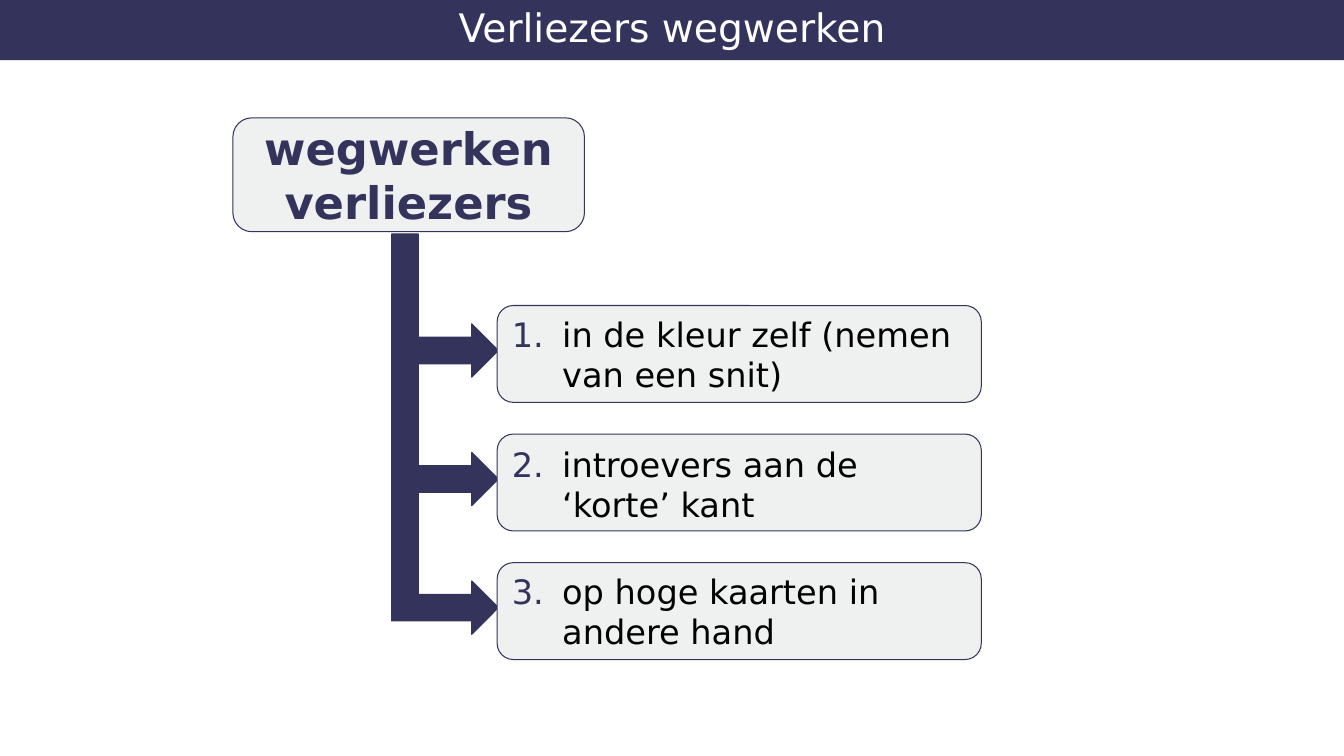
import pptx
import pptx.dml.color
import pptx.enum.shapes
import pptx.enum.text
import pptx.oxml.ns
import pptx.util
from lxml import etree

Cm, Pt = pptx.util.Cm, pptx.util.Pt
Kind = pptx.enum.shapes.MSO_SHAPE
Align = pptx.enum.text.PP_ALIGN
Anchor = pptx.enum.text.MSO_ANCHOR
qn = pptx.oxml.ns.qn


class Theme:
    navy, pale, white, black = "33335C", "EFF1F0", "FFFFFF", "000000"
    edge = Pt(0.75)
    face = "DejaVu Sans"
    title = {"size": Pt(28), "name": face, "color": white}
    head = {"size": Pt(32), "name": face, "color": navy, "bold": True}
    item = {"size": Pt(24), "name": face, "color": black}


def rgb(code):
    return pptx.dml.color.RGBColor.from_string(code)


def style(font, form):
    for key, value in form.items():
        if key == "color":
            font.color.rgb = rgb(value)
        else:
            setattr(font, key, value)


def block(slide, kind, box, fill, line=None):
    shape = slide.shapes.add_shape(kind, *map(Cm, box))
    shape.shadow.inherit = False
    shape.fill.solid()
    shape.fill.fore_color.rgb = rgb(fill)
    if line:
        shape.line.color.rgb = rgb(line)
        shape.line.width = Theme.edge
    else:
        shape.line.fill.background()
    return shape


def write(shape, lines, form, align, anchor=Anchor.MIDDLE):
    frame = shape.text_frame
    frame.word_wrap = True
    frame.auto_size = pptx.enum.text.MSO_AUTO_SIZE.NONE
    frame.vertical_anchor = anchor
    frame.text = "\n".join(lines)
    for para in frame.paragraphs:
        para.alignment = align
        style(para.runs[0].font, form)
    return frame


def number(para, start):
    """Give the paragraph a coloured automatic number and a hanging indent."""
    props = para._p.get_or_add_pPr()
    hang = Cm(1.27)
    props.set("marL", str(hang))
    props.set("indent", str(-hang))
    tint = etree.SubElement(props, qn("a:buClr"))
    etree.SubElement(tint, qn("a:srgbClr"), val=Theme.navy)
    etree.SubElement(props, qn("a:buAutoNum"), type="arabicPeriod",
                     startAt=str(start))


def banner(slide, box, text):
    x, y, w, h = box
    bar = block(slide, Kind.RECTANGLE, box, Theme.navy)
    title = slide.shapes.title
    bar.element.addnext(title.element)
    place = {"left": x, "top": y - 0.05, "width": w, "height": h + 0.05}
    for key, value in place.items():
        setattr(title, key, Cm(value))
    frame = write(title, [text], Theme.title, Align.CENTER)
    frame.paragraphs[0].line_spacing = 0.95


def header(slide, box, lines):
    card = block(slide, Kind.ROUNDED_RECTANGLE, box, Theme.pale, Theme.navy)
    write(card, lines, Theme.head, Align.CENTER)


def step(slide, box, index, text, anchor):
    """Draw a numbered card and the bent arrow that leads into its left side."""
    x, y, w, h = box
    long, wide = 3.61, 2.69
    mid = x - wide / 2 + 0.03
    arrow = block(slide, Kind.BENT_UP_ARROW,
                  (mid - long / 2, y - wide / 2, long, wide),
                  Theme.navy, Theme.navy)
    arrow.rotation = 90
    card = block(slide, Kind.ROUNDED_RECTANGLE, box, Theme.pale, Theme.navy)
    frame = write(card, [text], Theme.item, Align.LEFT, anchor)
    number(frame.paragraphs[0], index)


def steps(slide, box, items):
    x, y, w, h = box
    tall = 2.44
    pitch = (h - tall) / (len(items) - 1)
    for i, (text, anchor) in enumerate(items):
        step(slide, (x, y + i * pitch, w, tall), i + 1, text, anchor)


def main():
    deck = pptx.Presentation()
    deck.slide_width, deck.slide_height = Cm(33.87), Cm(19.05)
    slide = deck.slides.add_slide(deck.slide_layouts.get_by_name("Title Only"))
    banner(slide, (0, 0, 33.87, 1.52), "Verliezers wegwerken")
    header(slide, (5.87, 2.97, 8.86, 2.87), ["wegwerken", "verliezers"])
    steps(slide, (12.53, 7.7, 12.2, 8.92), [
        ("in de kleur zelf (nemen van een snit)", Anchor.MIDDLE),
        ("introevers aan de ‘korte’ kant", Anchor.TOP),
        ("op hoge kaarten in andere hand", Anchor.MIDDLE),
    ])
    deck.save("out.pptx")


if __name__ == "__main__":
    main()
